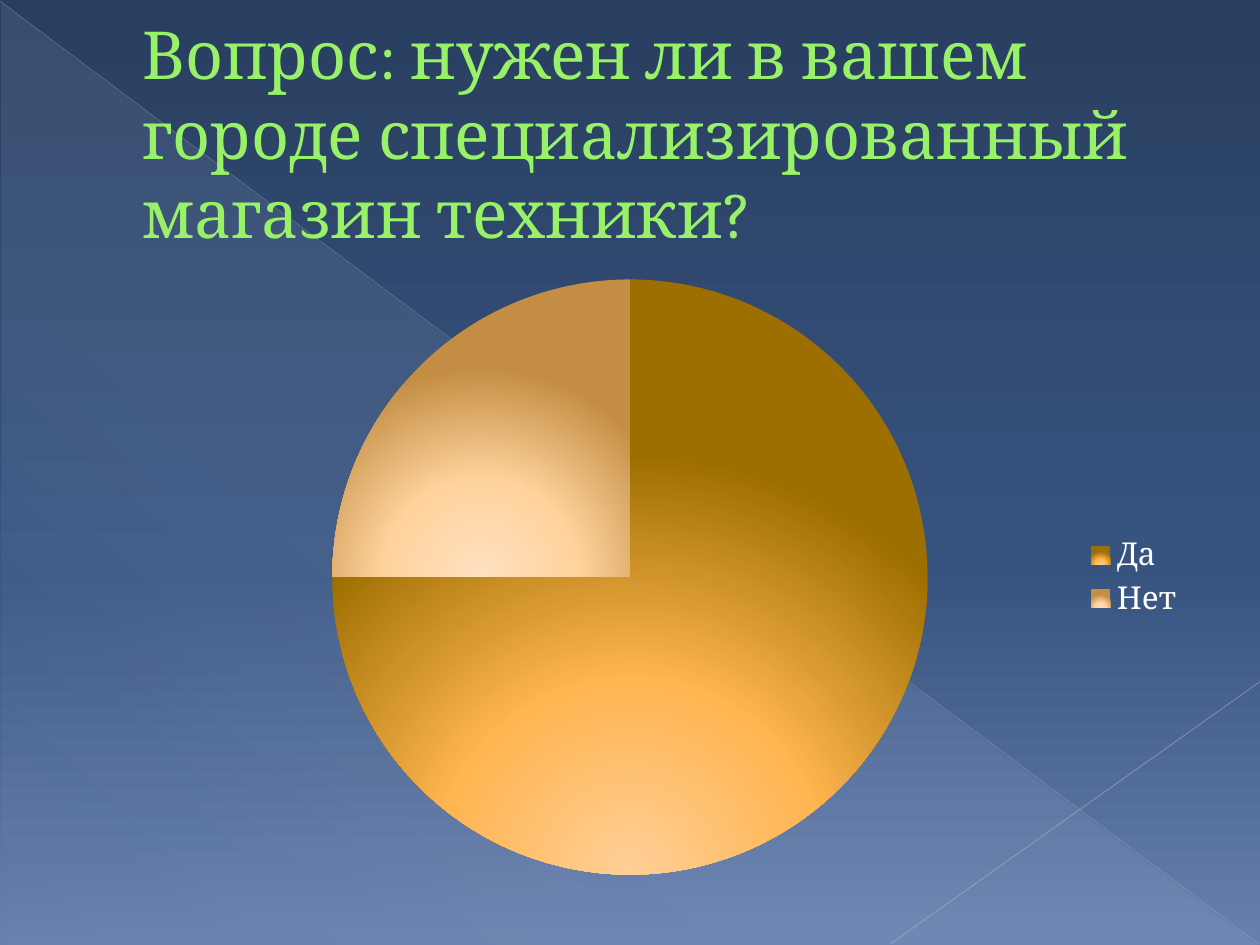
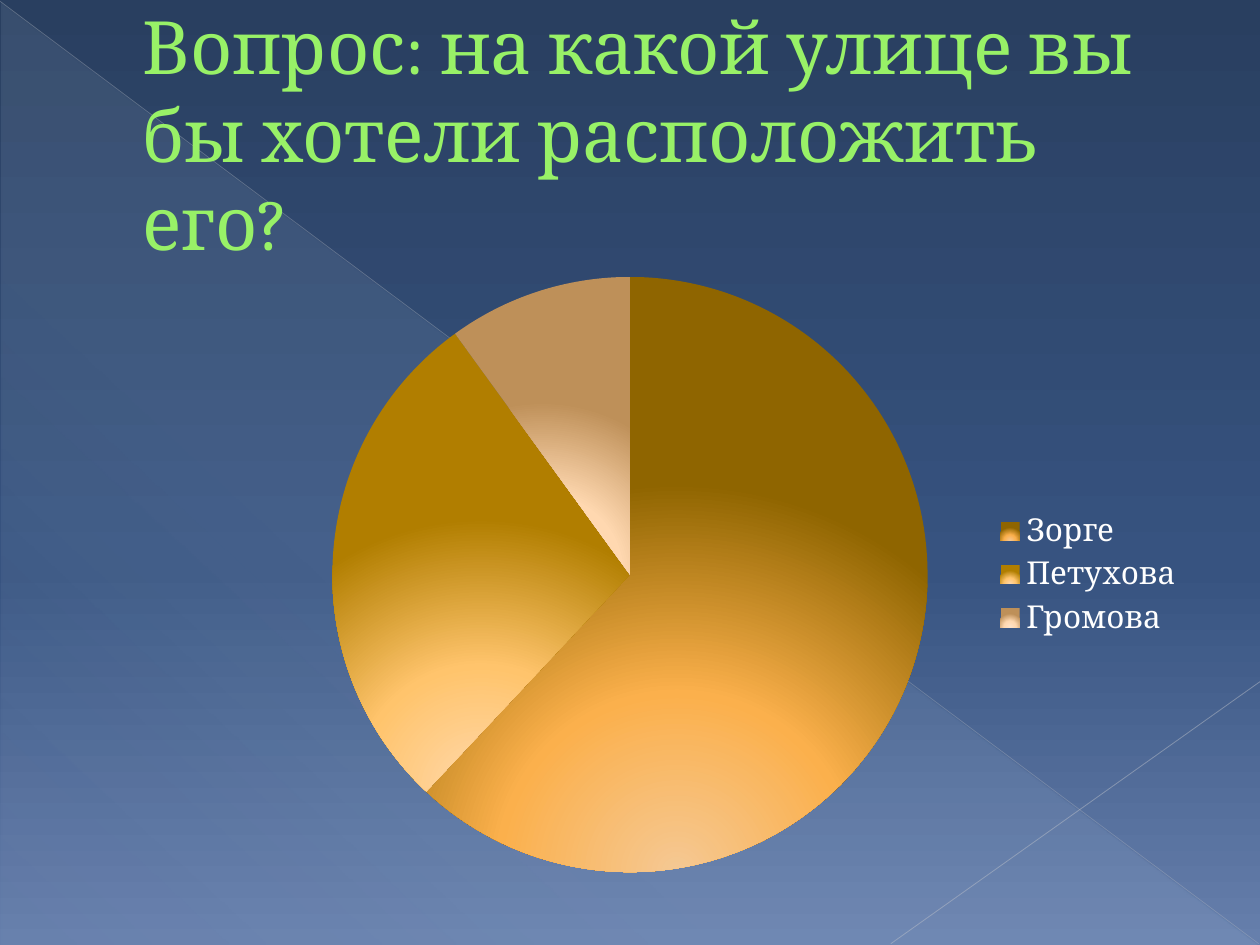
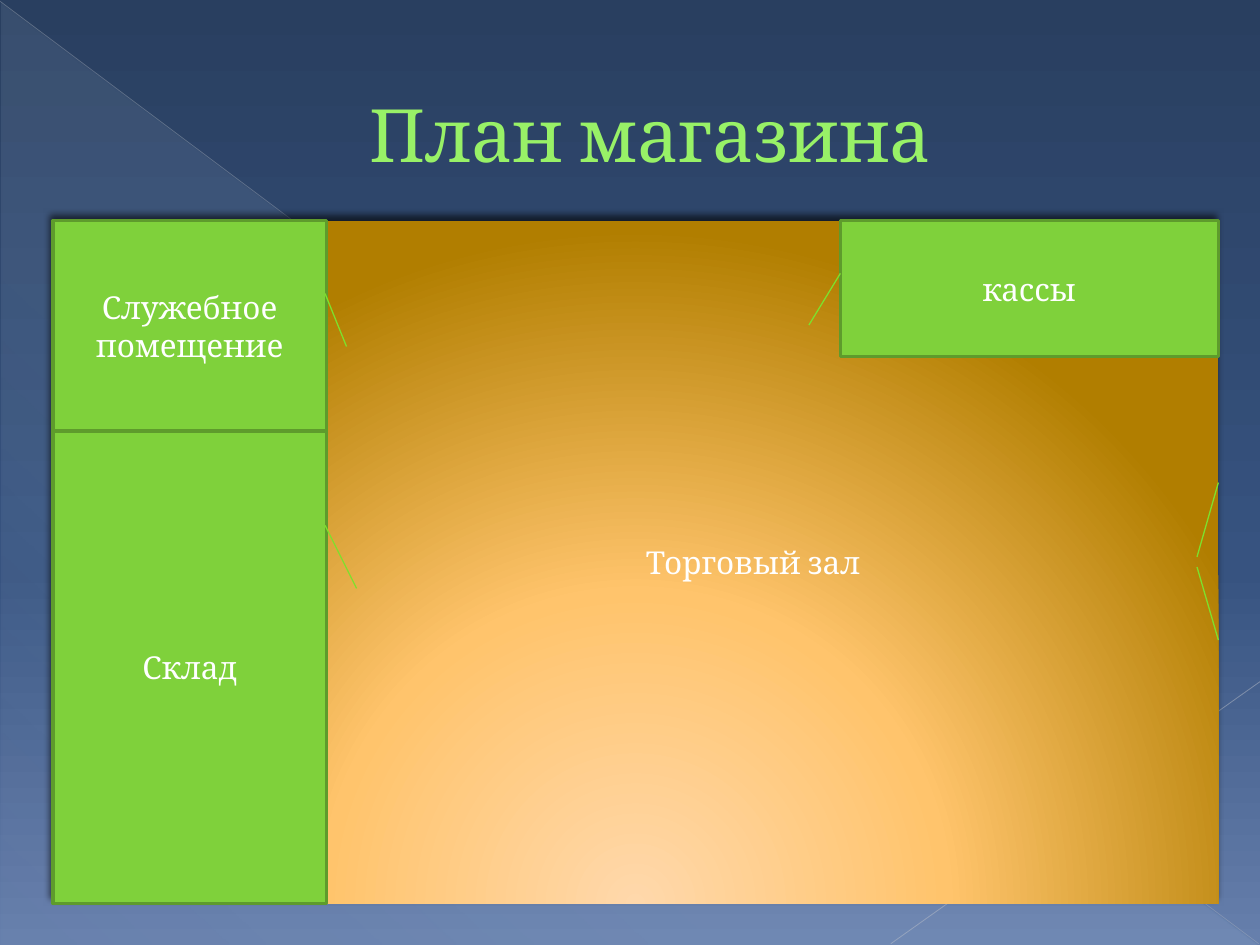
from lxml import etree
from pptx import Presentation
from pptx.chart.data import CategoryChartData
from pptx.dml.color import RGBColor
from pptx.enum.chart import XL_CHART_TYPE, XL_LEGEND_POSITION
from pptx.enum.shapes import MSO_CONNECTOR, MSO_SHAPE
from pptx.enum.text import MSO_ANCHOR, MSO_AUTO_SIZE, PP_ALIGN
from pptx.oxml.ns import qn
from pptx.util import Inches, Pt

PIE = XL_CHART_TYPE.PIE
LEGEND_RIGHT = XL_LEGEND_POSITION.RIGHT
STRAIGHT = MSO_CONNECTOR.STRAIGHT
RECTANGLE = MSO_SHAPE.RECTANGLE
RIGHT_TRIANGLE = MSO_SHAPE.RIGHT_TRIANGLE
MIDDLE = MSO_ANCHOR.MIDDLE
NO_AUTOFIT = MSO_AUTO_SIZE.NONE
LEFT = PP_ALIGN.LEFT
CENTER = PP_ALIGN.CENTER

FONT = "Cambria"
TITLE_GREEN = "98F167"
WHITE = "FFFFFF"
ROOM_FILL = "7FD13B"
ROOM_LINE = "5E9B2C"
DOOR_LINE = "7EE02C"
VEIL = "D6ECFF"
BACKGROUND = [(0, "293F60"), (60, "375380"), (100, "667FAC")]
VEIL_STOPS = [(0, VEIL, 10), (70, VEIL, 8), (100, VEIL, 1)]
AMBER = [(0, "FFD8AB"), (46, "FFC46C"), (100, "B17E00")]
TITLE_INDENT = 0.63
TITLE_ONLY = 5


def color(value):
    return RGBColor.from_string(value)


def add_node(parent, tag, **attributes):
    return etree.SubElement(parent, qn(tag), {key: str(value) for key, value in attributes.items()})


def add_color(parent, value, alpha=100):
    node = add_node(parent, "a:srgbClr", val=value)
    if alpha < 100:
        add_node(node, "a:alpha", val=alpha * 1000)


def set_gradient(fill, owner, stops, angle=None):
    fill.background()
    empty = next(owner.iter(qn("a:noFill")))
    gradient = etree.Element(qn("a:gradFill"), {"rotWithShape": "1"})
    stop_list = add_node(gradient, "a:gsLst")
    for position, *shade in stops:
        add_color(add_node(stop_list, "a:gs", pos=position * 1000), *shade)
    if angle is None:
        glow = add_node(gradient, "a:path", path="circle")
        add_node(glow, "a:fillToRect", l=50000, t=155000, r=50000, b=-55000)
    else:
        add_node(gradient, "a:lin", ang=angle * 60000, scaled=0)
    empty.getparent().replace(empty, gradient)


def style_text(frame, size, value, alignment):
    frame.word_wrap = True
    frame.vertical_anchor = MIDDLE
    for paragraph in frame.paragraphs:
        paragraph.alignment = alignment
        for run in paragraph.runs:
            run.font.name = FONT
            run.font.size = Pt(size)
            run.font.color.rgb = color(value)


def add_line(page, start, end, value, width, alpha=100):
    line = page.shapes.add_connector(STRAIGHT, *map(Inches, start + end))
    line.line.color.rgb = color(value)
    line.line.width = Pt(width)
    if alpha < 100:
        add_node(next(line.element.iter(qn("a:srgbClr"))), "a:alpha", val=alpha * 1000)
    add_node(line.element.spPr, "a:effectLst")
    return line


def add_block(page, kind, area):
    block = page.shapes.add_shape(kind, *map(Inches, area))
    block.shadow.inherit = False
    block.line.fill.background()
    return block


def label_block(block, text):
    block.text_frame.text = text
    style_text(block.text_frame, 18, WHITE, CENTER)


def add_room(page, text, area):
    room = add_block(page, RECTANGLE, area)
    room.fill.solid()
    room.fill.fore_color.rgb = color(ROOM_FILL)
    room.line.color.rgb = color(ROOM_LINE)
    room.line.width = Pt(2)
    label_block(room, text)


def add_hall(page, text, area):
    hall = add_block(page, RECTANGLE, area)
    set_gradient(hall.fill, hall.element.spPr, AMBER)
    effects = hall.element.spPr.find(qn("a:effectLst"))
    shadow = add_node(effects, "a:outerShdw", blurRad=Pt(4), dist=Pt(3), dir=245 * 60000)
    add_color(shadow, "000000", 60)
    label_block(hall, text)
    hall.text_frame.margin_left = Inches(1.96)


def add_page(deck, title, size, indent=TITLE_INDENT):
    page = deck.slides.add_slide(deck.slide_layouts[TITLE_ONLY])
    box = page.shapes.title
    box.left, box.top, box.width, box.height = map(Inches, (0.5, 0.29, 9, 1.53))
    frame = box.text_frame
    frame.text = title
    frame.auto_size = NO_AUTOFIT
    frame.margin_left = Inches(indent)
    style_text(frame, size, TITLE_GREEN, LEFT)
    return page


def decorate_master(deck, page):
    master = deck.slide_master
    set_gradient(master.background.fill, master.element, BACKGROUND, 90)
    veil = add_block(page, RIGHT_TRIANGLE, (0.01, 0.02, 9.98, 7.48))
    set_gradient(veil.fill, veil.element.spPr, VEIL_STOPS, 133)
    falling = add_line(page, (0, 0.01), (9.99, 7.49), "B7BCC5", 0.39, 35)
    rising = add_line(page, (10, 5.41), (7.07, 7.49), "BFC3CB", 0.47, 45)
    for index, shape in enumerate((veil, falling, rising)):
        next(shape.element.iter(qn("p:cNvPr"))).set("id", str(100 + index))
        master.shapes.element.insert(2 + index, shape.element)


def add_pie(page, top, answers):
    data = CategoryChartData()
    data.categories = [name for name, _, _ in answers]
    data.add_series("Series 1", [share for _, share, _ in answers])
    area = map(Inches, (0.5, top, 9, 5))
    chart = page.shapes.add_chart(PIE, *area, data).chart
    chart.has_title = False
    chart.font.name = FONT
    chart.font.size = Pt(18)
    chart.font.color.rgb = color(WHITE)
    chart.has_legend = True
    chart.legend.position = LEGEND_RIGHT
    chart.legend.include_in_layout = True
    plot = chart.plots[0]
    plot.vary_by_categories = True
    for index, (_, _, stops) in enumerate(answers):
        style = plot.series[0].points[index].format
        style.fill.background()
        slice_node = list(chart.element.iter(qn("c:dPt")))[index]
        set_gradient(style.fill, slice_node, stops)
        style.line.fill.background()


def main():
    deck = Presentation()
    deck.slide_width, deck.slide_height = Inches(10), Inches(7.5)

    need = add_page(deck, "Вопрос: нужен ли в вашем городе специализированный магазин техники?", 37.8)
    decorate_master(deck, need)
    add_pie(need, 2.08, [
        ("Да", 75, [(0, "FFCF97"), (46, "FFB551"), (100, "9D6F00")]),
        ("Нет", 25, [(0, "FFE0C0"), (46, "FFD39D"), (100, "C38D43")]),
    ])

    street = add_page(deck, "Вопрос: на какой улице вы бы хотели расположить его?", 42)
    add_pie(street, 2.06, [
        ("Зорге", 62, [(0, "F5C893"), (46, "FBB04C"), (100, "8F6500")]),
        ("Петухова", 28, AMBER),
        ("Громова", 10, [(0, "FFE3C8"), (46, "FFD8B0"), (100, "BE9059")]),
    ])

    plan = add_page(deck, "План магазина", 42, 2.43)
    add_hall(plan, "Торговый зал", (0.42, 1.75, 9.25, 5.42))
    for text, area in [
        ("Служебное помещение", (0.42, 1.75, 2.17, 1.67)),
        ("Склад", (0.42, 3.42, 2.17, 3.75)),
        ("кассы", (6.67, 1.75, 3, 1.08)),
    ]:
        add_room(plan, text, area)
    for hinge, edge in [
        ((9.67, 3.83), (9.5, 4.42)),
        ((9.67, 5.08), (9.5, 4.5)),
        ((2.58, 2.33), (2.75, 2.75)),
        ((2.58, 4.17), (2.83, 4.67)),
        ((6.67, 2.17), (6.42, 2.58)),
    ]:
        add_line(plan, hinge, edge, DOOR_LINE, 0.75)

    deck.save("out.pptx")


if __name__ == "__main__":
    main()
